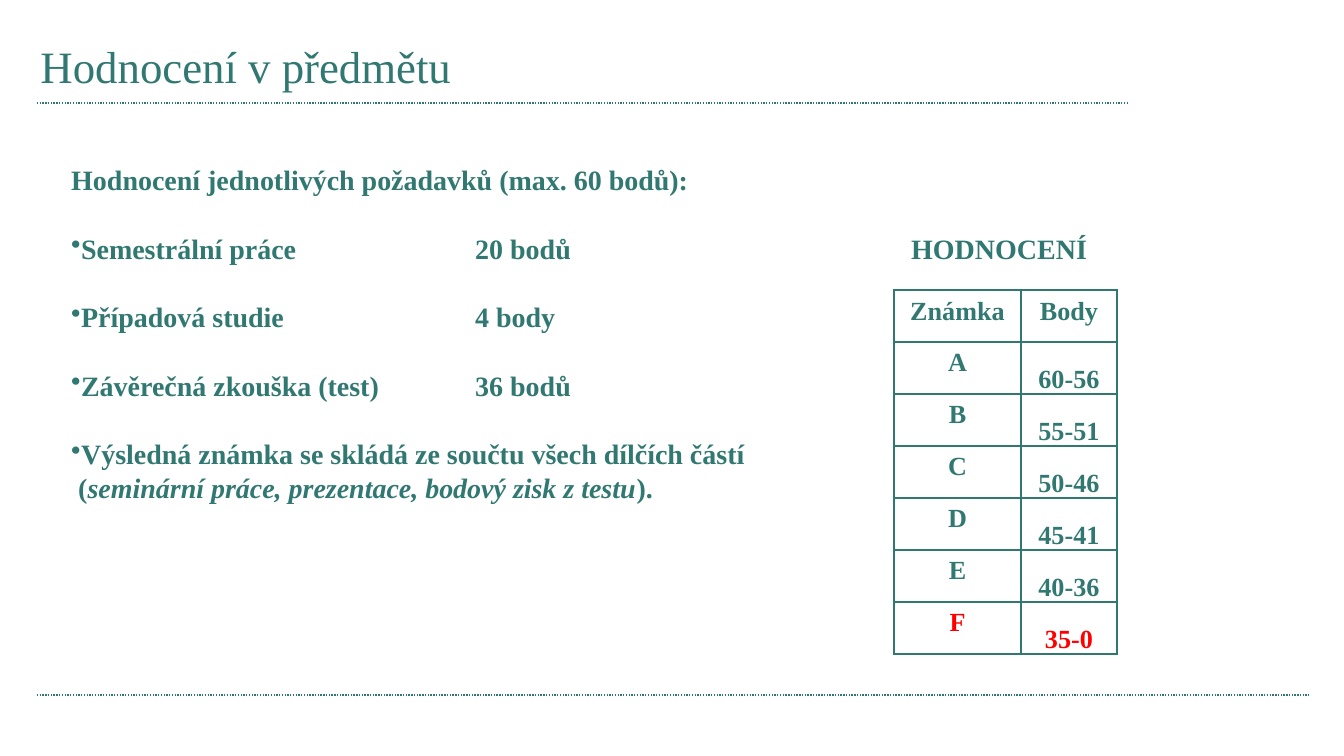
from lxml.etree import SubElement
from pptx import Presentation
from pptx.dml.color import RGBColor
from pptx.enum.dml import MSO_LINE
from pptx.enum.shapes import MSO_CONNECTOR
from pptx.enum.text import MSO_ANCHOR, PP_ALIGN
from pptx.oxml.ns import qn
from pptx.util import Pt

PX = 914400 / 134.4
TEAL = RGBColor(0x30, 0x78, 0x71)
RED = RGBColor(0xFF, 0x00, 0x00)
FONT = "Times New Roman"

HEADING = "Hodnocení jednotlivých požadavků (max. 60 bodů):"
REQUIREMENTS = [
    "Semestrální práce\t20 bodů\tHODNOCENÍ",
    "Případová studie\t4 body",
    "Závěrečná zkouška (test)\t36 bodů",
    "Výsledná známka se skládá ze součtu všech dílčích částí\v (",
]
GRADING_PARTS = "seminární práce, prezentace, bodový zisk z testu"
TAB_STOPS = (404, 840)
GRADES = [
    ("Známka", "Body"),
    ("A", "60-56"),
    ("B", "55-51"),
    ("C", "50-46"),
    ("D", "45-41"),
    ("E", "40-36"),
    ("F", "35-0"),
]


def px(length):
    return round(length * PX)


def format_runs(paragraph, size, color=TEAL, bold=True):
    for run in paragraph.runs:
        run.font.name = FONT
        run.font.size = Pt(size)
        run.font.bold = bold
        run.font.color.rgb = color


def add_rule(slide, left, top, width):
    rule = slide.shapes.add_connector(
        MSO_CONNECTOR.STRAIGHT, px(left), px(top), px(left + width), px(top))
    rule.line.color.rgb = TEAL
    rule.line.width = Pt(0.75)
    rule.line.dash_style = MSO_LINE.ROUND_DOT
    SubElement(rule._element.spPr, qn("a:effectLst"))


def add_title(slide, left, top, width, height):
    title = slide.shapes.title
    title.left, title.top = px(left), px(top)
    title.width, title.height = px(width), px(height)
    frame = title.text_frame
    frame.text = "Hodnocení v předmětu"
    frame.vertical_anchor = MSO_ANCHOR.MIDDLE
    frame.paragraphs[0].alignment = PP_ALIGN.LEFT
    format_runs(frame.paragraphs[0], 24, bold=False)


def add_bullet_and_tabs(paragraph):
    properties = paragraph._p.get_or_add_pPr()
    properties.set("marL", "0")
    properties.set("indent", "0")
    SubElement(properties, qn("a:buChar"), char="•")
    tabs = SubElement(properties, qn("a:tabLst"))
    for stop in TAB_STOPS:
        SubElement(tabs, qn("a:tab"), pos=str(px(stop)), algn="l")


def add_requirements(slide, left, top, width, height):
    requirements = slide.shapes.add_textbox(
        px(left), px(top), px(width), px(height))
    frame = requirements.text_frame
    frame.word_wrap = True
    frame.text = HEADING
    for requirement in REQUIREMENTS:
        paragraph = frame.add_paragraph()
        paragraph.text = requirement
        add_bullet_and_tabs(paragraph)
        paragraph.space_before = Pt(18.75)
    parts = paragraph.add_run()
    parts.text = GRADING_PARTS
    parts.font.italic = True
    paragraph.add_run().text = ")."
    for paragraph in frame.paragraphs:
        format_runs(paragraph, 15)


def add_borders(cell):
    properties = cell._tc.get_or_add_tcPr()
    for side in ("lnL", "lnR", "lnT", "lnB"):
        border = SubElement(properties, qn(f"a:{side}"), w=str(Pt(1)))
        fill = SubElement(border, qn("a:solidFill"))
        SubElement(fill, qn("a:srgbClr"), val=str(TEAL))


def add_grades(slide, left, top, column_widths, row_height):
    grades = slide.shapes.add_table(
        len(GRADES), len(column_widths), px(left), px(top),
        px(sum(column_widths)), px(row_height * len(GRADES))).table
    grades.first_row = False
    grades.horz_banding = False
    for column, width in zip(grades.columns, column_widths):
        column.width = px(width)
    for row, entries in enumerate(GRADES):
        for column, entry in enumerate(entries):
            cell = grades.cell(row, column)
            cell.text = entry
            add_borders(cell)
            cell.fill.background()
            if row and column:
                cell.vertical_anchor = MSO_ANCHOR.BOTTOM
                cell.margin_left = cell.margin_right = cell.margin_top = px(1)
                cell.margin_bottom = 0
            paragraph = cell.text_frame.paragraphs[0]
            paragraph.alignment = PP_ALIGN.CENTER
            format_runs(paragraph, 14, RED if entries[0] == "F" else TEAL)


def main():
    presentation = Presentation()
    presentation.slide_width = px(1344)
    presentation.slide_height = px(756)
    slide = presentation.slides.add_slide(presentation.slide_layouts[5])
    add_rule(slide, 37, 103, 1090)
    add_rule(slide, 37, 695, 1272)
    add_requirements(slide, 58, 156, 1218, 306)
    add_title(slide, 27, 28, 571, 75)
    add_grades(slide, 894, 290, (127, 96), 52)
    presentation.save("out.pptx")


if __name__ == "__main__":
    main()
